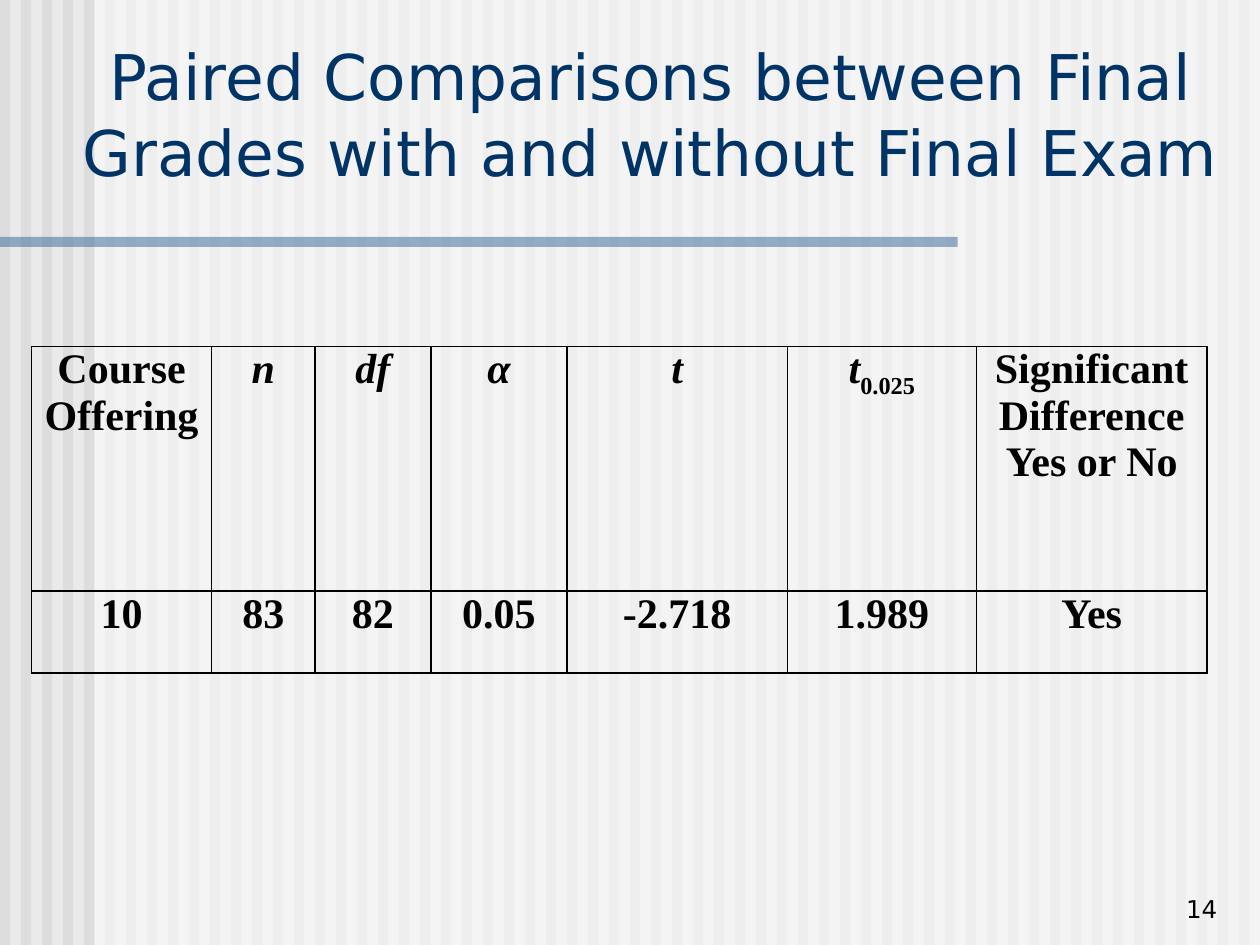
from lxml import etree
from pptx import Presentation
from pptx.dml.color import RGBColor
from pptx.enum.shapes import MSO_SHAPE
from pptx.enum.text import MSO_ANCHOR, PP_ALIGN
from pptx.oxml.ns import qn
from pptx.util import Inches, Pt

RECTANGLE = MSO_SHAPE.RECTANGLE
CENTER, RIGHT = PP_ALIGN.CENTER, PP_ALIGN.RIGHT
TOP, BOTTOM = MSO_ANCHOR.TOP, MSO_ANCHOR.BOTTOM

COLORS = {
    "background": "EAEAEA",
    "stripe": "DDDDDD",
    "veil": "FFFFFF",
    "rule": "336699",
    "title": "003366",
    "text": "000000",
}
SANS, SERIF = "DejaVu Sans", "Times New Roman"

STRIPE_COUNT = 60
COLUMN_WIDTHS = [1.43, 0.82, 0.92, 1.08, 1.75, 1.5, 1.83]
ROW_HEIGHTS = [1.94, 0.65]
HEADERS = ["Course Offering", "n", "df", "α", "t", "t",
           "Significant\nDifference Yes or No"]
SYMBOLS = {"n", "df", "α", "t"}
SUBSCRIPTS = {5: "0.025"}
RESULTS = ["10", "83", "82", "0.05", "-2.718", "1.989", "Yes"]


def color(name):
    return RGBColor.from_string(COLORS[name])


def add_band(slide, left, top, width, height, fill, alpha=None):
    band = slide.shapes.add_shape(
        RECTANGLE, Inches(left), Inches(top), Inches(width), Inches(height))
    band.shadow.inherit = False
    band.fill.solid()
    band.fill.fore_color.rgb = color(fill)
    band.line.fill.background()
    if alpha is not None:
        tint = band.fill._xPr.find(".//" + qn("a:srgbClr"))
        etree.SubElement(tint, qn("a:alpha"), val=str(alpha * 1000))


def style_paragraph(paragraph, font_name, size, fill, align):
    paragraph.alignment = align
    paragraph.font.name = font_name
    paragraph.font.size = Pt(size)
    paragraph.font.color.rgb = color(fill)


def add_label(slide, left, top, width, height, text, size, fill, align, anchor):
    label = slide.shapes.add_textbox(
        Inches(left), Inches(top), Inches(width), Inches(height))
    frame = label.text_frame
    frame.word_wrap = True
    frame.vertical_anchor = anchor
    frame.text = text
    style_paragraph(frame.paragraphs[0], SANS, size, fill, align)


def add_borders(cell):
    properties = cell._tc.get_or_add_tcPr()
    for position, side in enumerate(("lnL", "lnR", "lnT", "lnB")):
        border = etree.Element(qn("a:" + side), w=str(Pt(1)))
        line_fill = etree.SubElement(border, qn("a:solidFill"))
        etree.SubElement(line_fill, qn("a:srgbClr"), val=COLORS["text"])
        properties.insert(position, border)


def fill_cell(cell, text, subscript=None):
    cell.margin_left = cell.margin_right = Inches(0.07)
    cell.margin_top = cell.margin_bottom = 0
    cell.vertical_anchor = TOP
    cell.fill.background()
    add_borders(cell)
    cell.text_frame.text = text
    for paragraph in cell.text_frame.paragraphs:
        style_paragraph(paragraph, SERIF, 24, "text", CENTER)
        paragraph.font.bold = True
        paragraph.runs[0].font.italic = text in SYMBOLS
    if subscript:
        index = cell.text_frame.paragraphs[0].add_run()
        index.text = subscript
        index.font.italic = False
        index._r.get_or_add_rPr().set("baseline", "-25000")


def add_results_table(slide):
    table = slide.shapes.add_table(
        len(ROW_HEIGHTS), len(COLUMN_WIDTHS), Inches(0.25), Inches(2.75),
        Inches(sum(COLUMN_WIDTHS)), Inches(sum(ROW_HEIGHTS))).table
    table.first_row = table.horz_banding = False
    for column, width in zip(table.columns, COLUMN_WIDTHS):
        column.width = Inches(width)
    for row, height in zip(table.rows, ROW_HEIGHTS):
        row.height = Inches(height)
    for position, (header, result) in enumerate(zip(HEADERS, RESULTS)):
        fill_cell(table.cell(0, position), header, SUBSCRIPTS.get(position))
        fill_cell(table.cell(1, position), result)


def add_backdrop(slide):
    slide.background.fill.solid()
    slide.background.fill.fore_color.rgb = color("background")
    for stripe in range(STRIPE_COUNT):
        add_band(slide, stripe / 6, 0, 0.08, 7.5, "stripe")
    add_band(slide, 0.75, 0, 9.25, 7.5, "veil", alpha=50)
    add_band(slide, 0, 1.88, 7.6, 0.08, "rule", alpha=50)


def main():
    deck = Presentation()
    deck.slide_width, deck.slide_height = Inches(10), Inches(7.5)
    slide = deck.slides.add_slide(deck.slide_layouts[6])
    add_backdrop(slide)
    add_label(slide, 0.33, 0.25, 9.67, 1.31,
              "Paired Comparisons between Final Grades with and without Final Exam",
              36, "title", CENTER, TOP)
    add_label(slide, 7.68, 6.88, 2.08, 0.5, "14", 14, "text", RIGHT, BOTTOM)
    add_results_table(slide)
    deck.save("out.pptx")


if __name__ == "__main__":
    main()
